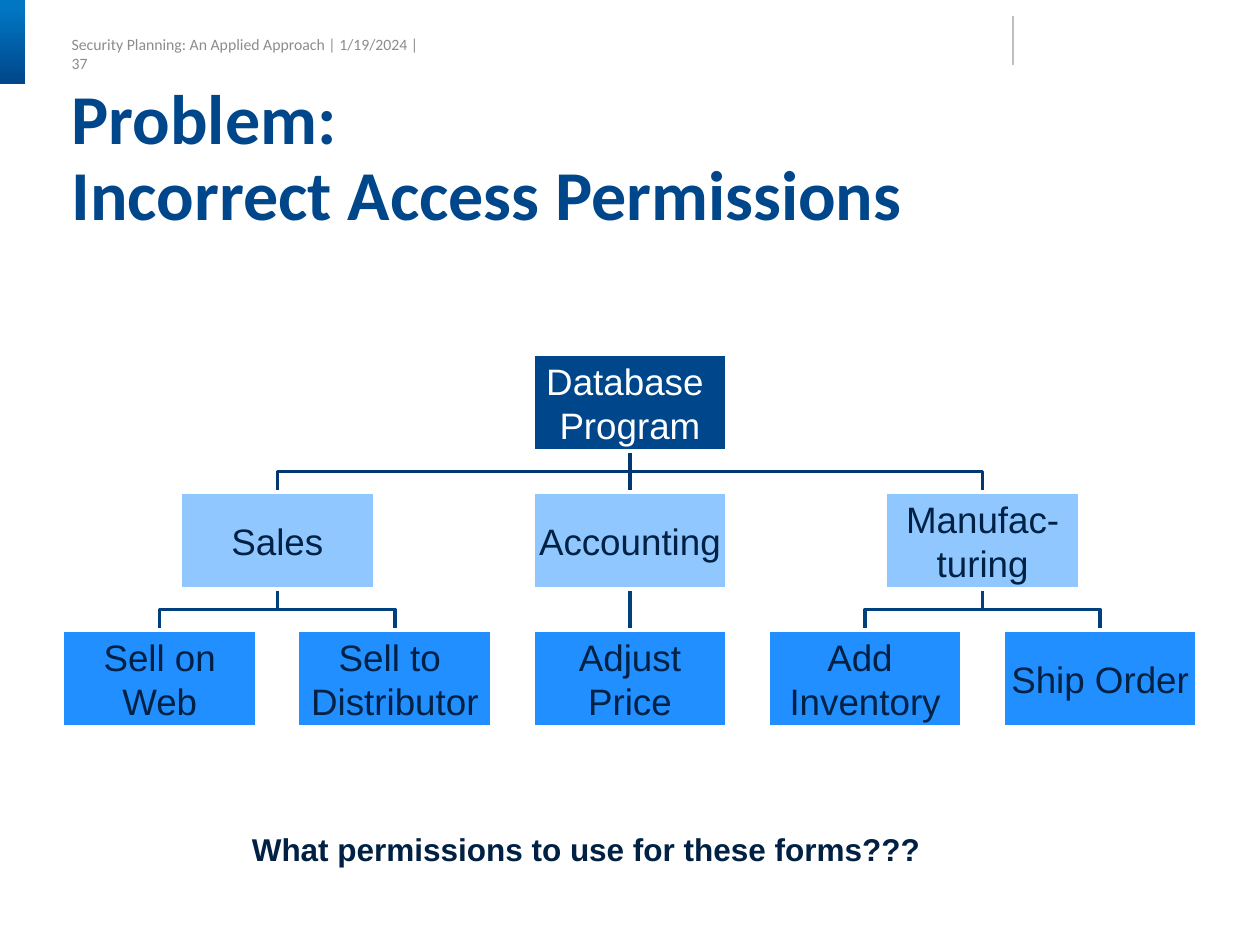
from lxml import etree
from pptx import Presentation
from pptx.dml.color import RGBColor
from pptx.enum.shapes import MSO_CONNECTOR, MSO_SHAPE
from pptx.enum.text import MSO_ANCHOR, PP_ALIGN
from pptx.oxml.ns import qn
from pptx.util import Pt

RECT = MSO_SHAPE.RECTANGLE
STRAIGHT = MSO_CONNECTOR.STRAIGHT
TOP, MIDDLE = MSO_ANCHOR.TOP, MSO_ANCHOR.MIDDLE
CENTER = PP_ALIGN.CENTER

COLORS = {
    "white": "FFFFFF", "navy": "00468A", "bright": "0176C3", "ink": "002143",
    "department": "90C7FF", "form": "218FFF", "upper_link": "00386F",
    "lower_link": "00407D", "footer": "8C8C8C", "rule": "BFBFBF",
}
CENTER_X, COLUMN_PITCH = 360, 134.35
CHART_TOP, ROW_PITCH = 202.4, 78.8
BOX_W, BOX_H = 111, 55.5
DEPARTMENTS = [
    (-1.5, "Sales", [(-2, "Sell on Web"), (-1, "Sell to \nDistributor")]),
    (0, "Accounting", [(0, "Adjust Price")]),
    (1.5, "Manufac-\nturing", [(1, "Add \nInventory"), (2, "Ship Order")]),
]


def rgb(name):
    """Return the named colour."""
    return RGBColor.from_string(COLORS[name])


def column_x(column):
    """Return the centre of a column."""
    return CENTER_X + column * COLUMN_PITCH


def row_y(row):
    """Return the top of a row."""
    return CHART_TOP + row * ROW_PITCH


def set_text(tf, text, font, size, color, bold=False):
    """Fill a text frame and format its runs."""
    tf.text = text
    for p in tf.paragraphs:
        for r in p.runs:
            r.font.name = font
            r.font.size = Pt(size)
            r.font.bold = bold
            r.font.color.rgb = rgb(color)


def set_insets(tf, left, top, right, bottom):
    """Set the margins of a text frame."""
    tf.margin_left, tf.margin_top = Pt(left), Pt(top)
    tf.margin_right, tf.margin_bottom = Pt(right), Pt(bottom)


def add_label(s, x, y, w, h, text, font, size, color, bold=False,
              insets=(7.2, 3.6, 7.2, 3.6), anchor=TOP, wrap=False):
    """Add a text box and return its text frame."""
    tf = s.shapes.add_textbox(Pt(x), Pt(y), Pt(w), Pt(h)).text_frame
    tf.word_wrap = wrap
    tf.vertical_anchor = anchor
    set_insets(tf, *insets)
    set_text(tf, text, font, size, color, bold)
    return tf


def add_line(s, x1, y1, x2, y2, color, width):
    """Add a straight line without a shadow."""
    line = s.shapes.add_connector(STRAIGHT, Pt(x1), Pt(y1), Pt(x2), Pt(y2))
    line.line.color.rgb = rgb(color)
    line.line.width = Pt(width)
    etree.SubElement(line._element.spPr, qn("a:effectLst"))


def add_link(s, parent, child, row, color):
    """Link a box in a row to a box in the next row."""
    x1, x2 = column_x(parent), column_x(child)
    y1, y2 = row_y(row) + BOX_H, row_y(row + 1)
    if parent == child:
        add_line(s, x1, y1, x2, y2, color, 2)
        return
    mid = (y1 + y2) / 2
    builder = s.shapes.build_freeform(Pt(x1), Pt(y1))
    corners = [(x1, mid), (x2, mid), (x2, y2)]
    builder.add_line_segments([(Pt(x), Pt(y)) for x, y in corners], close=False)
    sp = builder.convert_to_shape()
    sp.shadow.inherit = False
    sp.fill.background()
    sp.line.color.rgb = rgb(color)
    sp.line.width = Pt(2)


def add_box(s, column, row, text, fill, color="ink"):
    """Add a box of the hierarchy."""
    sp = s.shapes.add_shape(RECT, Pt(column_x(column) - BOX_W / 2),
                            Pt(row_y(row)), Pt(BOX_W), Pt(BOX_H))
    sp.shadow.inherit = False
    sp.fill.solid()
    sp.fill.fore_color.rgb = rgb(fill)
    sp.line.color.rgb = rgb("white")
    sp.line.width = Pt(2)
    tf = sp.text_frame
    tf.word_wrap = True
    tf.vertical_anchor = MIDDLE
    set_insets(tf, 0.7, 0.7, 0.7, 0.7)
    set_text(tf, text, "Arial", 21, color)
    for p in tf.paragraphs:
        p.alignment = CENTER


def add_accent(s):
    """Add the gradient bar in the corner."""
    sp = s.shapes.add_shape(RECT, 0, 0, Pt(14.4), Pt(48))
    sp.shadow.inherit = False
    sp.line.fill.background()
    sp.fill.gradient()
    sp.fill.gradient_angle = 270
    stops = zip(sp.fill.gradient_stops, ("bright", "navy"), (0.1, 1))
    for stop, color, position in stops:
        stop.color.rgb = rgb(color)
        stop.position = position


def add_hierarchy(s):
    """Add the links, then the boxes over them."""
    for column, _, forms in DEPARTMENTS:
        add_link(s, 0, column, 0, "upper_link")
        for form_column, _ in forms:
            add_link(s, column, form_column, 1, "lower_link")
    add_box(s, 0, 0, "Database \nProgram", "navy", "white")
    for column, name, forms in DEPARTMENTS:
        add_box(s, column, 1, name, "department")
        for form_column, form in forms:
            add_box(s, form_column, 2, form, "form")


def main():
    """Build and save the slide."""
    prs = Presentation()
    prs.slide_width, prs.slide_height = Pt(720), Pt(540)
    s = prs.slides.add_slide(prs.slide_layouts[6])
    add_label(s, 41, 16.6, 204.5, 16.6,
              "Security Planning: An Applied Approach | 1/19/2024 | 37",
              "Calibri", 9, "footer", insets=(0, 14.4, 0, 2.9), anchor=MIDDLE)
    add_accent(s)
    add_line(s, 578.9, 9.4, 578.9, 37.4, "rule", 0.75)
    title = add_label(s, 41, 48.2, 642, 63.4,
                      "Problem:\vIncorrect Access Permissions",
                      "Calibri", 40, "navy", True, (0, 0, 0, 0), wrap=True)
    title.paragraphs[0].line_spacing = 0.9
    add_hierarchy(s)
    add_label(s, 136.8, 470.9, 396.7, 28.8,
              "What permissions to use for these forms???",
              "Arial", 18, "ink", True)
    prs.save("out.pptx")


if __name__ == "__main__":
    main()
